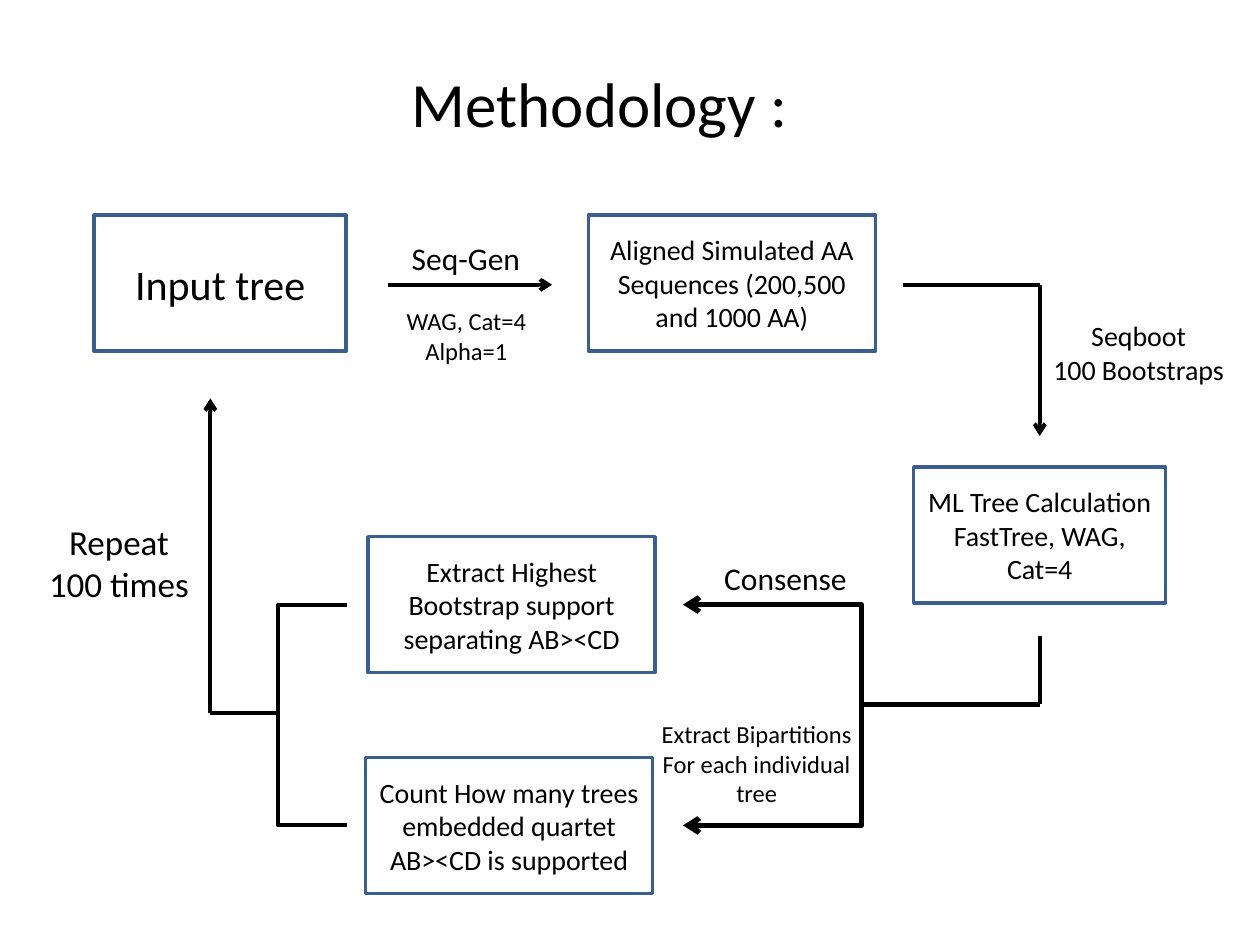
from lxml import etree
from pptx import Presentation
from pptx.dml.color import RGBColor
from pptx.enum.shapes import MSO_CONNECTOR, MSO_SHAPE
from pptx.enum.text import MSO_ANCHOR, MSO_AUTO_SIZE, PP_ALIGN
from pptx.oxml.ns import qn
from pptx.util import Cm, Pt

STRAIGHT, ELBOW = MSO_CONNECTOR.STRAIGHT, MSO_CONNECTOR.ELBOW
RECTANGLE = MSO_SHAPE.RECTANGLE
TOP, MIDDLE = MSO_ANCHOR.TOP, MSO_ANCHOR.MIDDLE
LEFT, CENTER = PP_ALIGN.LEFT, PP_ALIGN.CENTER
NO_AUTOFIT, FIT_SHAPE = MSO_AUTO_SIZE.NONE, MSO_AUTO_SIZE.SHAPE_TO_FIT_TEXT

COLORS = {"text": "000000", "arrow": "000000", "box": "FFFFFF", "border": "3A5F8C"}
FONT = "Calibri"


def color(name):
    return RGBColor.from_string(COLORS[name])


def write_text(shape, lines, size, align, anchor, wrap, auto_size):
    frame = shape.text_frame
    frame.word_wrap = wrap
    frame.auto_size = auto_size
    frame.vertical_anchor = anchor
    for index, line in enumerate(lines):
        paragraph = frame.add_paragraph() if index else frame.paragraphs[0]
        paragraph.alignment = align
        run = paragraph.add_run()
        run.text = line
        run.font.name = FONT
        run.font.size = Pt(size)
        run.font.color.rgb = color("text")


presentation = Presentation()
presentation.slide_width = Cm(25.4)
presentation.slide_height = Cm(19.05)
slide = presentation.slides.add_slide(presentation.slide_layouts[5])

title = slide.shapes.title
title.left, title.top, title.width, title.height = Cm(8.05), Cm(1.17), Cm(9.6), Cm(1.8)
write_text(title, ["Methodology :"], 36, LEFT, TOP, True, NO_AUTOFIT)

top_row, upper_row, lower_row = 5.74, 12.19, 16.64
loop_x, tree_x = 4.24, 20.96
split_y, merge_y = 14.2, 14.38

connectors = [
    (STRAIGHT, 7.82, top_row, 11.13, top_row, 2.25, True),
    (STRAIGHT, 18.21, top_row, tree_x, top_row, 2.25, False),
    (STRAIGHT, tree_x, top_row, tree_x, 8.79, 2.25, True),
    (STRAIGHT, tree_x, 12.83, tree_x, split_y, 2.25, False),
    (STRAIGHT, loop_x, merge_y, loop_x, 8.03, 2.25, True),
]
for row in (upper_row, lower_row):
    connectors.append((ELBOW, tree_x, split_y, 13.77, row, 3, True))
    connectors.append((ELBOW, 6.99, row, loop_x, merge_y, 2.25, False))

for kind, begin_x, begin_y, end_x, end_y, width, has_arrow in connectors:
    connector = slide.shapes.add_connector(
        kind, Cm(begin_x), Cm(begin_y), Cm(end_x), Cm(end_y))
    connector.line.color.rgb = color("arrow")
    connector.line.width = Pt(width)
    if has_arrow:
        etree.SubElement(connector.line._get_or_add_ln(), qn("a:tailEnd"), type="arrow")
    etree.SubElement(connector._element.spPr, qn("a:effectLst"))

box_height = 2.74
boxes = [
    (1.9, 4.34, 5.08, 24, "Input tree"),
    (11.86, 4.34, 5.79, 16, "Aligned Simulated AA Sequences (200,500 and 1000 AA)"),
    (18.42, 9.42, 5.08, 16, "ML Tree Calculation FastTree, WAG, Cat=4"),
    (7.42, 10.82, 5.79, 16, "Extract Highest Bootstrap support separating AB><CD"),
    (7.37, 15.27, 5.79, 16, "Count How many trees embedded quartet AB><CD is supported"),
]
for left, top, width, size, text in boxes:
    box = slide.shapes.add_shape(RECTANGLE, Cm(left), Cm(top), Cm(width), Cm(box_height))
    box.shadow.inherit = False
    box.fill.solid()
    box.fill.fore_color.rgb = color("box")
    box.line.color.rgb = color("border")
    box.line.width = Pt(2)
    write_text(box, [text], size, CENTER, MIDDLE, True, NO_AUTOFIT)

labels = [
    (8.05, 4.7, 2.72, 1.02, 18, LEFT, ["Seq-Gen"]),
    (7.87, 6.05, 3.07, 1.45, 14, CENTER, ["WAG, Cat=4", "Alpha=1"]),
    (20.9, 6.3, 4.11, 1.6, 16, CENTER, ["Seqboot", "100 Bootstraps"]),
    (14.35, 11.15, 3.02, 1.02, 18, LEFT, ["Consense"]),
    (12.98, 14.38, 4.55, 2.06, 14, CENTER,
     ["Extract Bipartitions", "For each individual", "tree"]),
    (0.71, 10.36, 3.38, 1.96, 20, CENTER, ["Repeat", "100 times"]),
]
for left, top, width, height, size, align, lines in labels:
    label = slide.shapes.add_textbox(Cm(left), Cm(top), Cm(width), Cm(height))
    write_text(label, lines, size, align, TOP, False, FIT_SHAPE)

presentation.save("out.pptx")
